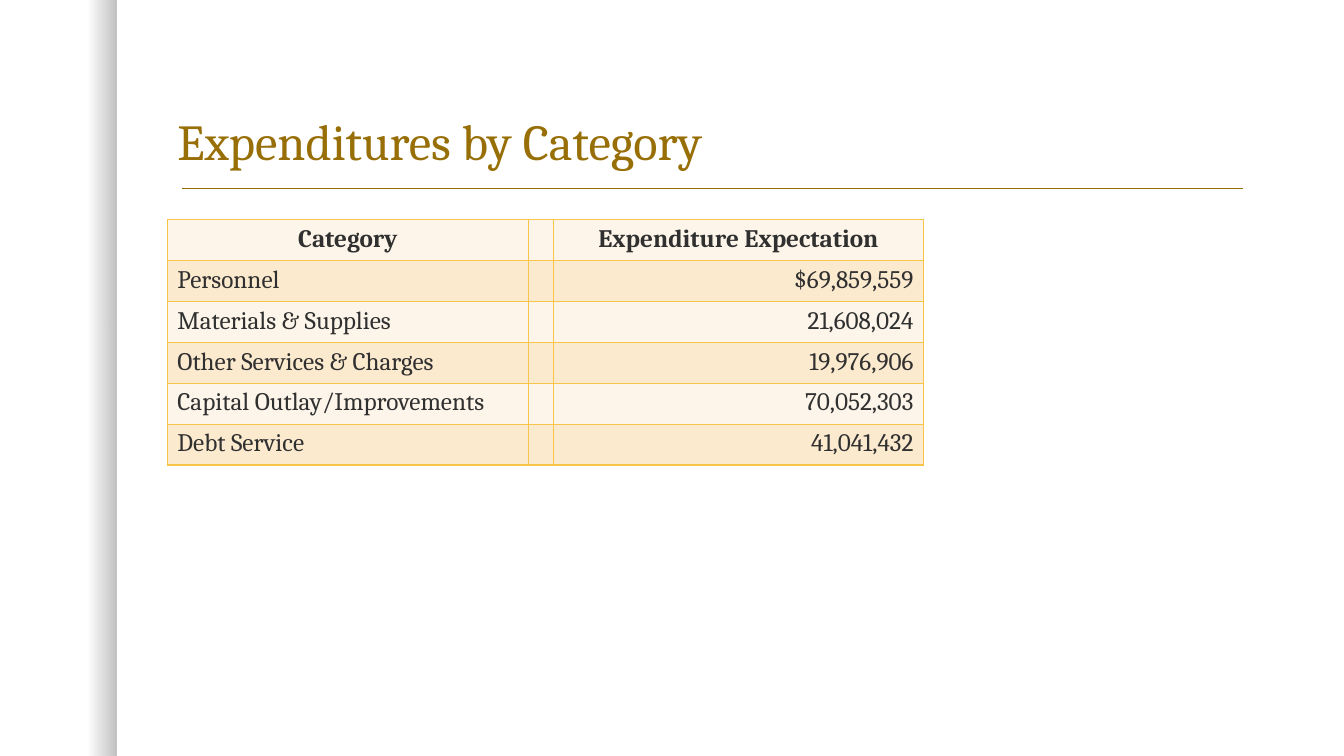
import dataclasses

import pptx
import pptx.dml.color
import pptx.enum.shapes
import pptx.enum.text
import pptx.oxml.ns
import pptx.oxml.xmlchemy
import pptx.util

Inches = pptx.util.Inches
Align = pptx.enum.text.PP_ALIGN
Anchor = pptx.enum.text.MSO_ANCHOR
new_element = pptx.oxml.xmlchemy.OxmlElement


def rgb(value):
    return pptx.dml.color.RGBColor.from_string(value)


@dataclasses.dataclass(frozen=True)
class Theme:
    font: str = "Cambria"
    title_size: int = 36
    body_size: int = 18
    gold: str = "986F07"
    ink: str = "303030"
    border: str = "F7C547"
    bands: tuple = ("FDF5E9", "FCEACF")
    shade: str = "000000"


THEME = Theme()

HEADINGS = ("Category", "", "Expenditure Expectation")
EXPENDITURES = (
    ("Personnel", "", "$69,859,559"),
    ("Materials & Supplies", "", "21,608,024"),
    ("Other Services & Charges", "", "19,976,906"),
    ("Capital Outlay/Improvements", "", "70,052,303"),
    ("Debt Service", "", "41,041,432"),
)
COLUMN_WIDTHS = (3.58, 0.25, 3.67)
COLUMN_ALIGNS = (Align.LEFT, Align.LEFT, Align.RIGHT)


def apply(target, values):
    for name, value in values.items():
        setattr(target, name, value)


def add_text(paragraph, text, size, color, bold=False):
    run = paragraph.add_run()
    run.text = text
    apply(run.font, {"name": THEME.font, "size": pptx.util.Pt(size), "bold": bold})
    run.font.color.rgb = rgb(color)


def add_binding_shade(slide, left, top, width, height):
    """Soft shadow fading in towards the right edge of the band."""
    band = slide.shapes.add_shape(
        pptx.enum.shapes.MSO_SHAPE.RECTANGLE,
        Inches(left), Inches(top), Inches(width), Inches(height))
    band.shadow.inherit = False
    band.line.fill.background()
    band.fill.gradient()
    band.fill.gradient_angle = 0
    # Position and opacity of each stop
    fades = ((0.75, 0), (1, 25))
    for stop, (position, _) in zip(band.fill.gradient_stops, fades):
        stop.position = position
        stop.color.rgb = rgb(THEME.shade)
    colors = band._element.spPr.iter(pptx.oxml.ns.qn("a:srgbClr"))
    for color, (_, opacity) in zip(list(colors), fades):
        alpha = new_element("a:alpha")
        alpha.set("val", str(opacity * 1000))
        color.append(alpha)


def add_heading(slide, left, top, width, height):
    """Title with a rule beneath it."""
    title = slide.shapes.title
    apply(title, {"left": Inches(left), "top": Inches(top),
                  "width": Inches(width), "height": Inches(height)})
    apply(title.text_frame, {"word_wrap": True, "vertical_anchor": Anchor.BOTTOM,
                             "auto_size": pptx.enum.text.MSO_AUTO_SIZE.NONE})
    paragraph = title.text_frame.paragraphs[0]
    apply(paragraph, {"alignment": Align.LEFT, "line_spacing": 0.9})
    add_text(paragraph, "Expenditures by Category", THEME.title_size, THEME.gold)

    rule_y = Inches(top + height + 0.12)
    rule = slide.shapes.add_connector(
        pptx.enum.shapes.MSO_CONNECTOR.STRAIGHT,
        Inches(left + 0.15), rule_y, Inches(left + width - 0.08), rule_y)
    rule.line.color.rgb = rgb(THEME.gold)
    rule.line.width = pptx.util.Pt(1)
    rule._element.spPr.append(new_element("a:effectLst"))


def add_borders(cell):
    properties = cell._tc.get_or_add_tcPr()
    for index, side in enumerate(("a:lnL", "a:lnR", "a:lnT", "a:lnB")):
        line = new_element(side)
        line.set("w", str(int(pptx.util.Pt(1))))
        fill = new_element("a:solidFill")
        color = new_element("a:srgbClr")
        color.set("val", THEME.border)
        fill.append(color)
        line.append(fill)
        properties.insert(index, line)


def add_expenditure_table(slide, left, top, row_height):
    """Expenditure per category, in rows of alternating tint."""
    rows = (HEADINGS, *EXPENDITURES)
    table = slide.shapes.add_table(
        len(rows), len(HEADINGS), Inches(left), Inches(top),
        Inches(sum(COLUMN_WIDTHS)), Inches(row_height * len(rows))).table
    apply(table, {"first_row": False, "horz_banding": False})
    for column, width in zip(table.columns, COLUMN_WIDTHS):
        column.width = Inches(width)
    for r, entries in enumerate(rows):
        for c, entry in enumerate(entries):
            cell = table.cell(r, c)
            cell.fill.solid()
            cell.fill.fore_color.rgb = rgb(THEME.bands[r % 2])
            add_borders(cell)
            if entry:
                paragraph = cell.text_frame.paragraphs[0]
                paragraph.alignment = COLUMN_ALIGNS[c] if r else Align.CENTER
                add_text(paragraph, entry, THEME.body_size, THEME.ink, bold=r == 0)


def main():
    deck = pptx.Presentation()
    apply(deck, {"slide_width": Inches(13.33), "slide_height": Inches(7.5)})
    slide = deck.slides.add_slide(deck.slide_layouts.get_by_name("Title Only"))
    add_binding_shade(slide, 0, 0, 1.16, 7.5)
    add_heading(slide, 1.66, 0.42, 10.75, 1.33)
    add_expenditure_table(slide, 1.66, 2.18, 0.39)
    deck.save("out.pptx")


if __name__ == "__main__":
    main()
